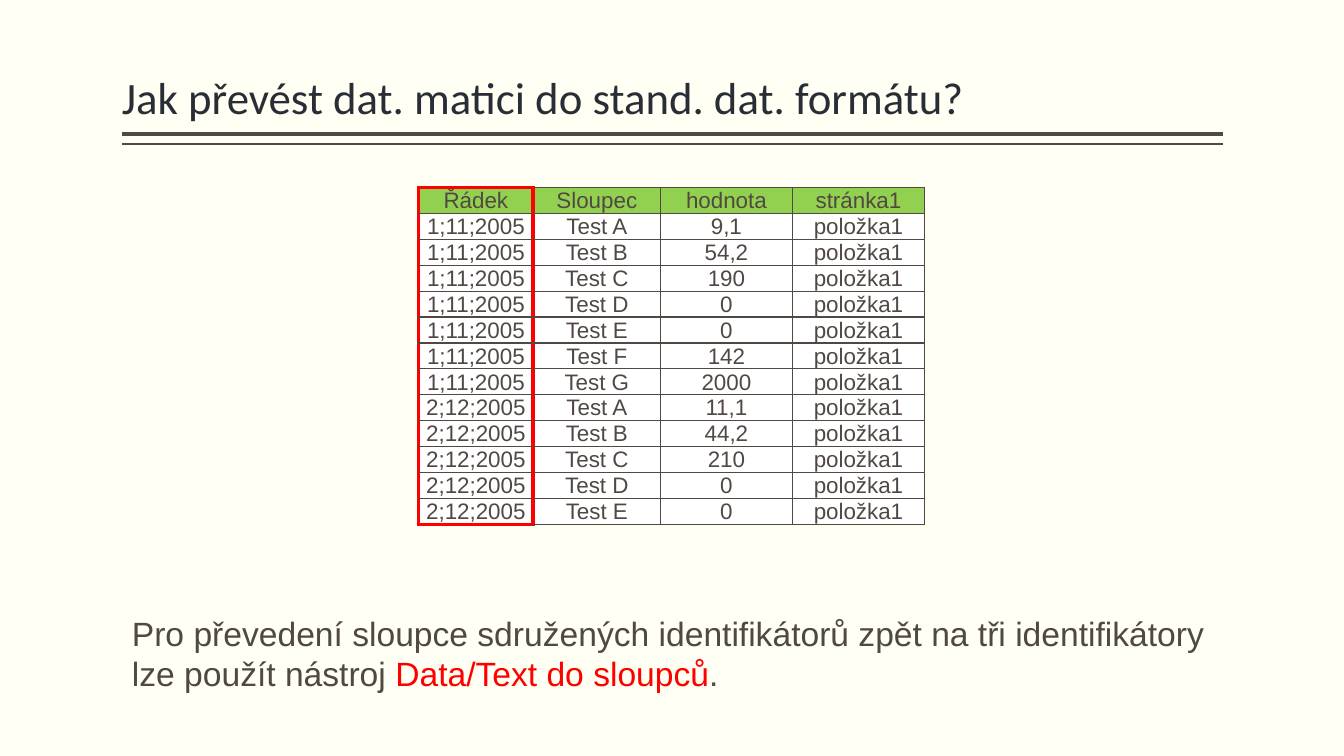
from lxml import etree
from pptx import Presentation
from pptx.dml.color import RGBColor
from pptx.enum import shapes, text
from pptx.oxml.ns import qn
from pptx.util import Inches, Pt

# Content
TITLE = "Jak převést dat. matici do stand. dat. formátu?"
HEADER = ("Řádek", "Sloupec", "hodnota", "stránka1")
RESULTS = {
    "1;11;2005": ("9,1", "54,2", "190", "0", "0", "142", "2000"),
    "2;12;2005": ("11,1", "44,2", "210", "0", "0"),
}
ITEM = "položka1"

BROWN = RGBColor(0x51, 0x48, 0x43)
NAVY = RGBColor(0x29, 0x2D, 0x35)
RED = RGBColor(0xFF, 0x00, 0x00)
GREEN = RGBColor(0x92, 0xD0, 0x50)
WHITE = RGBColor(0xFF, 0xFF, 0xFF)
IVORY = RGBColor(0xFF, 0xFF, 0xF3)

NOTE = (
    ("Pro převedení sloupce sdružených identifikátorů zpět na tři "
     "identifikátory lze použít nástroj ", BROWN),
    ("Data/Text do sloupců", RED),
    (".", BROWN),
)

# Layout in inches
LEFT, WIDTH = 1.21, 10.92
RULES = ((1.33, 3), (1.43, 1))
COLUMNS = (1.14, 1.26, 1.31, 1.31)
ROW_HEIGHT = 0.21


def style(span, font, size, color):
    span.font.name = font
    span.font.size = Pt(size)
    span.font.color.rgb = color


def add_border(cell, side, color, points):
    line = etree.SubElement(cell._tc.get_or_add_tcPr(), qn(f"a:ln{side}"),
                            w=str(Pt(points)))
    fill = etree.SubElement(line, qn("a:solidFill"))
    etree.SubElement(fill, qn("a:srgbClr"), val=str(color))


def is_red(side, row, column, last_row):
    """The first column is framed in red."""
    if column == 0:
        return (side in "LR" or (side == "T" and row == 0)
                or (side == "B" and row == last_row))
    return column == 1 and side == "L"


def add_title(slide):
    title = slide.shapes.title
    title.left, title.top = Inches(LEFT), Inches(0.08)
    title.width, title.height = Inches(WIDTH), Inches(1.2)
    frame = title.text_frame
    frame.text = TITLE
    frame.word_wrap = True
    frame.vertical_anchor = text.MSO_ANCHOR.BOTTOM
    frame.margin_left = frame.margin_right = 0
    para = frame.paragraphs[0]
    para.alignment = text.PP_ALIGN.LEFT
    para.line_spacing = 0.9
    style(para.runs[0], "Calibri", 32, NAVY)


def add_rules(slide):
    for y, points in RULES:
        rule = slide.shapes.add_connector(
            shapes.MSO_CONNECTOR.STRAIGHT, Inches(LEFT + WIDTH), Inches(y),
            Inches(LEFT), Inches(y))
        rule.line.color.rgb = BROWN
        rule.line.width = Pt(points)
        etree.SubElement(rule._element.spPr, qn("a:effectLst"))


def add_results(slide):
    rows = [HEADER] + [
        (day, f"Test {letter}", value, ITEM)
        for day, values in RESULTS.items()
        for letter, value in zip("ABCDEFG", values)]
    table = slide.shapes.add_table(
        len(rows), len(COLUMNS), Inches(4.15), Inches(1.86),
        Inches(sum(COLUMNS)), Inches(ROW_HEIGHT * len(rows))).table
    for column, width in zip(table.columns, COLUMNS):
        column.width = Inches(width)
    for r, values in enumerate(rows):
        for c, value in enumerate(values):
            cell = table.cell(r, c)
            cell.text = value
            cell.vertical_anchor = text.MSO_ANCHOR.BOTTOM
            cell.margin_left = cell.margin_right = cell.margin_top = Inches(0.01)
            cell.margin_bottom = 0
            para = cell.text_frame.paragraphs[0]
            para.alignment = text.PP_ALIGN.CENTER
            style(para.runs[0], "Arial", 16, BROWN)
            # Borders come before the fill in the cell properties
            for side in "LRTB":
                red = is_red(side, r, c, len(rows) - 1)
                add_border(cell, side, RED if red else BROWN, 3 if red else 1)
            cell.fill.solid()
            cell.fill.fore_color.rgb = GREEN if r == 0 else WHITE


def add_note(slide):
    box = slide.shapes.add_textbox(Inches(LEFT), Inches(6.03),
                                   Inches(WIDTH), Inches(0.91))
    frame = box.text_frame
    frame.word_wrap = True
    frame.auto_size = text.MSO_AUTO_SIZE.SHAPE_TO_FIT_TEXT
    for words, color in NOTE:
        span = frame.paragraphs[0].add_run()
        span.text = words
        style(span, "Arial", 24, color)


def main():
    deck = Presentation()
    deck.slide_width, deck.slide_height = Inches(13.33), Inches(7.5)
    slide = deck.slides.add_slide(deck.slide_layouts[5])
    slide.background.fill.solid()
    slide.background.fill.fore_color.rgb = IVORY
    add_rules(slide)
    add_title(slide)
    add_results(slide)
    add_note(slide)
    deck.save("out.pptx")


if __name__ == "__main__":
    main()
